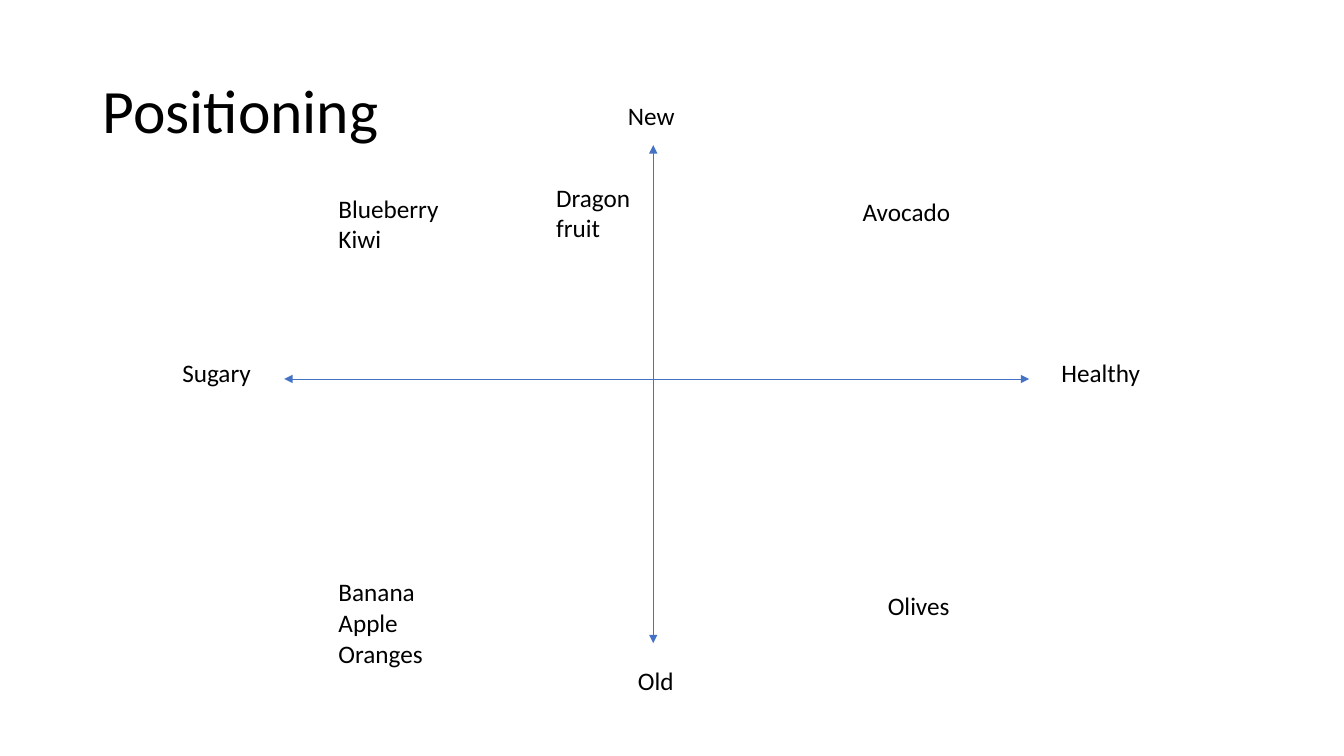
from lxml.etree import SubElement
from pptx import Presentation
from pptx.dml.color import RGBColor
from pptx.enum.shapes import MSO_CONNECTOR
from pptx.enum.text import MSO_ANCHOR, MSO_AUTO_SIZE, PP_ALIGN
from pptx.oxml.ns import qn
from pptx.util import Pt


def rgb(hex_color):
    return RGBColor.from_string(hex_color)


def add_run(p, text, size):
    r = p.add_run()
    r.text = text
    r.font.name = "Calibri"
    r.font.size = Pt(size)
    r.font.color.rgb = rgb("000000")


prs = Presentation()
prs.slide_width, prs.slide_height = Pt(960), Pt(540)
s = prs.slides.add_slide(prs.slide_layouts[5])

title = s.shapes.title
title.left, title.top, title.width, title.height = Pt(66), Pt(28.75), Pt(828), Pt(104.4)
tf = title.text_frame
tf.word_wrap = True
tf.auto_size = MSO_AUTO_SIZE.NONE
tf.vertical_anchor = MSO_ANCHOR.MIDDLE
p = tf.paragraphs[0]
p.alignment = PP_ALIGN.LEFT
p.line_spacing = 0.9
add_run(p, "Positioning", 44)

# Axes: start x, start y, end x, end y
axes = s.shapes.add_group_shape()
for ends in [(466.6, 103.7, 466.6, 459.4), (203, 270.7, 735.1, 270.7)]:
    axis = axes.shapes.add_connector(MSO_CONNECTOR.STRAIGHT, *map(Pt, ends))
    axis.line.color.rgb = rgb("4472C4")
    axis.line.width = Pt(0.5)
    ln = axis.line._get_or_add_ln()
    for end in ("a:headEnd", "a:tailEnd"):
        SubElement(ln, qn(end), type="triangle")
    SubElement(axis._element.spPr, qn("a:effectLst"))

# Labels: parent shapes, paragraphs, left, top, width, height
AXIS_W, FRUIT_W = 118.8, 89.3
ONE_LINE, TWO_LINES = 29.1, 50.9
labels = [
    (axes.shapes, ["New"], 441.4, 68.4, AXIS_W, ONE_LINE),
    (s.shapes, ["Old"], 448.6, 471.6, AXIS_W, ONE_LINE),
    (axes.shapes, ["Healthy"], 751, 252, AXIS_W, ONE_LINE),
    (axes.shapes, ["Sugary"], 123.1, 252, AXIS_W, ONE_LINE),
    (s.shapes, ["Avocado"], 609.1, 136.8, FRUIT_W, ONE_LINE),
    (s.shapes, ["Olives"], 627.1, 418.3, FRUIT_W, ONE_LINE),
    (s.shapes, ["Blueberry", "Kiwi"], 234.7, 134.6, FRUIT_W, TWO_LINES),
    (s.shapes, ["Dragon fruit"], 390.2, 126.7, FRUIT_W, TWO_LINES),
]
for i, fruit in enumerate(["Banana", "Apple", "Oranges"]):
    labels.append((s.shapes, [fruit], 234.7, 408.2 + 22 * i, FRUIT_W, ONE_LINE))

for shapes, lines, *box in labels:
    tf = shapes.add_textbox(*map(Pt, box)).text_frame
    tf.word_wrap = True
    tf.auto_size = MSO_AUTO_SIZE.SHAPE_TO_FIT_TEXT
    for i, line in enumerate(lines):
        p = tf.add_paragraph() if i else tf.paragraphs[0]
        add_run(p, line, 18)

prs.save("out.pptx")
